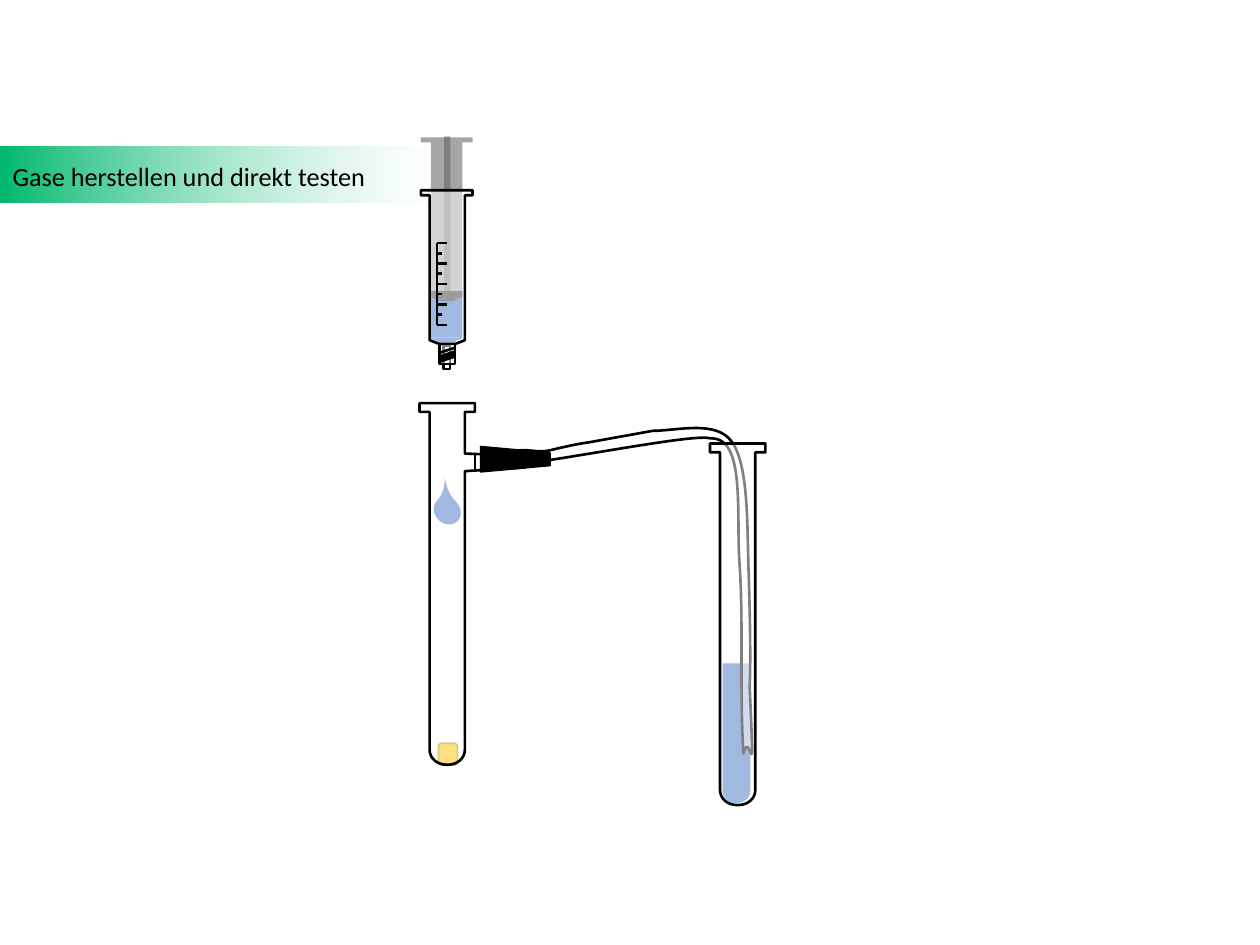
from lxml import etree
from pptx import Presentation
from pptx.dml.color import RGBColor
from pptx.enum.shapes import MSO_CONNECTOR, MSO_SHAPE
from pptx.enum.text import MSO_ANCHOR, MSO_AUTO_SIZE, PP_ALIGN
from pptx.oxml.ns import qn
from pptx.util import Cm, Pt

THEME = dict(font="Calibri", title_size=15, outline=1.5, thin=1,
             ink="000000", glass="FFFFFF", accent="00B86E", liquid="4472C4",
             solid="FFC000", solid_edge="BD8E00", plunger="A6A6A6",
             rod="808080", seal="3B3838")
TITLE = "Gase herstellen und direkt testen"

# All coordinates are in inches; a six-number step is a Bézier curve.
HOSE = [(5.95, 5.45), (5.96, 5.2, 5.95, 4.8, 5.94, 4.49),
        (5.93, 4.17, 5.94, 3.69, 5.81, 3.51), (5.69, 3.33, 5.37, 3.42, 5.18, 3.42),
        (4.68, 3.51), (4.54, 3.53, 4.43, 3.56, 4.34, 3.58),
        (4.24, 3.59, 4.16, 3.56, 4.12, 3.58), (4.11, 3.63, 4.11, 3.65, 4.1, 3.69),
        (4.63, 3.62, 5.53, 3.44, 5.64, 3.48), (5.92, 3.47, 5.84, 4.07, 5.87, 4.49),
        (5.9, 4.9, 5.87, 5.51, 5.9, 5.98), (5.96, 5.76, 5.99, 6.39, 5.95, 5.45)]
PLUNGER = [(3.75, 1.09), (3.75, 1.13), (3.67, 1.13), (3.67, 2.31),
           (3.42, 2.31), (3.42, 1.13), (3.34, 1.13), (3.34, 1.09)]
BARREL = [(3.75, 1.51), (3.75, 1.55), (3.69, 1.55), (3.69, 2.7), (3.64, 2.72),
          (3.61, 2.73), (3.49, 2.73), (3.46, 2.72), (3.41, 2.7), (3.41, 1.55),
          (3.34, 1.55), (3.34, 1.51)]
SIDE_ARM = [(0.14, 0.54), (0.62, 0.51), (0.62, 0.42), (0.14, 0.4)]
TUBES = [(5.855, 3.52, []), (3.55, 3.2, SIDE_ARM)]  # centre, top, side arm
ARM_RINGS = [3.77, 3.9, 4.03]
SCALE_X, SCALE_TOP, SCALE_STEP, SCALE_MARKS = 3.47, 1.93, 0.081, 9
THREAD_TOPS = [2.76, 2.79, 2.81, 2.83]


def inch(v):
    return Cm(2.54 * v)


def rgb(name):
    return RGBColor.from_string(THEME[name])


def set_alpha(color_parent, percent):
    color = color_parent.find(".//" + qn("a:srgbClr"))
    etree.SubElement(color, qn("a:alpha")).set("val", str(percent * 1000))


def paint(sp, fill=None, line=None, width=THEME["outline"]):
    sp.shadow.inherit = False
    if fill:
        sp.fill.solid()
        sp.fill.fore_color.rgb = rgb(fill)
        if fill == "glass":
            set_alpha(sp._element.spPr.find(qn("a:solidFill")), 50)
    else:
        sp.fill.background()
    if line:
        sp.line.color.rgb = rgb(line)
        sp.line.width = Pt(width)
    else:
        sp.line.fill.background()
    return sp


def shape(parent, kind, x, y, w, h, rotation=0, **style):
    sp = parent.shapes.add_shape(kind, inch(x), inch(y), inch(w), inch(h))
    sp.rotation = rotation
    return paint(sp, **style)


def outline(parent, steps, **style):
    """Draw a closed outline; each curve's three points become one Bézier."""
    points = [(inch(x), inch(y)) for step in steps
              for x, y in zip(step[::2], step[1::2])]
    builder = parent.shapes.build_freeform(*points[0])
    builder.add_line_segments(points[1:], close=True)
    sp = builder.convert_to_shape()
    segments = iter(list(sp._element.iter(qn("a:lnTo"))))
    for step in steps[1:]:
        segment = next(segments)
        if len(step) == 6:
            segment.tag = qn("a:cubicBezTo")
            for _ in range(2):
                control = next(segments)
                segment.append(control[0])
                control.getparent().remove(control)
    return paint(sp, **style)


def line(parent, x1, y1, x2, y2):
    cx = parent.shapes.add_connector(MSO_CONNECTOR.STRAIGHT, inch(x1), inch(y1),
                                     inch(x2), inch(y2))
    cx.line.color.rgb = rgb("ink")
    cx.line.width = Pt(THEME["outline"])
    etree.SubElement(cx._element.spPr, qn("a:effectLst"))


def tube_path(cx, top, arm):
    wall, rim, lip, bend, bottom = 0.14, 0.22, top + 0.07, top + 2.75, top + 2.87
    left, right = cx - wall, cx + wall
    return [(left, lip), (cx - rim, lip), (cx - rim, top), (cx + rim, top),
            (cx + rim, lip), (right, lip),
            *[(cx + x, top + y) for x, y in reversed(arm)], (right, bend),
            (right, bend + 0.07, cx + 0.08, bottom, cx, bottom),
            (cx - 0.08, bottom, left, bend + 0.07, left, bend)]


def stopper_path(top, shoulder):
    """Tapered end that closes a liquid column or the plunger."""
    return [(3.67, top), (3.67, shoulder), (3.63, shoulder + 0.01),
            (3.6, shoulder + 0.03), (3.48, shoulder + 0.03),
            (3.45, shoulder + 0.01), (3.42, shoulder), (3.42, top)]


def add_title(s):
    banner = shape(s, MSO_SHAPE.RECTANGLE, 0, 1.16, 3.44, 0.45)
    banner.fill.gradient()
    banner.fill.gradient_angle = 180
    for stop, name, pos in zip(banner.fill.gradient_stops, ("glass", "accent"), (0, 1)):
        stop.color.rgb = rgb(name)
        stop.position = pos
    set_alpha(banner._element.spPr.find(qn("a:gradFill")), 42)

    title = s.shapes.title
    title._element.addprevious(banner._element)
    title.left, title.top, title.width, title.height = map(inch, (0, 1.22, 3.03, 0.34))
    tf = title.text_frame
    tf.text = TITLE
    tf.word_wrap = False
    tf.auto_size = MSO_AUTO_SIZE.SHAPE_TO_FIT_TEXT
    tf.vertical_anchor = MSO_ANCHOR.TOP
    p = tf.paragraphs[0]
    p.alignment = PP_ALIGN.LEFT
    p.font.name, p.font.size = THEME["font"], Pt(THEME["title_size"])
    p.font.color.rgb = rgb("ink")


def add_test_tubes(s):
    drop = shape(s, MSO_SHAPE.TEAR, 3.45, 3.94, 0.2, 0.23, 314.8, fill="liquid")
    drop.adjustments[0] = 1.74
    shape(s, MSO_SHAPE.ROUNDED_RECTANGLE, 3.48, 5.9, 0.15, 0.17,
          fill="solid", line="solid_edge", width=THEME["thin"])
    liquid = s.shapes.add_group_shape()
    shape(liquid, MSO_SHAPE.OVAL, 5.75, 6.17, 0.19, 0.22, 268.7, fill="liquid")
    shape(liquid, MSO_SHAPE.RECTANGLE, 5.34, 5.66, 1.01, 0.22, 270, fill="liquid")
    glassware = s.shapes.add_group_shape()
    outline(glassware, HOSE, fill="glass", line="ink")
    for tube in TUBES:
        outline(glassware, tube_path(*tube), fill="glass", line="ink")
    for x in reversed(ARM_RINGS):
        line(glassware, x, 3.73, x, 3.61)
    shape(s, MSO_SHAPE.TRAPEZOID, 3.99, 3.37, 0.2, 0.55, 90,
          fill="ink", line="ink", width=THEME["thin"])


def add_syringe(s):
    g = s.shapes.add_group_shape()
    outline(g, stopper_path(2.68, 2.69), fill="liquid")
    shape(g, MSO_SHAPE.RECTANGLE, 3.36, 2.37, 0.37, 0.25, 90, fill="liquid")
    outline(g, PLUNGER, fill="plunger")
    shape(g, MSO_SHAPE.RECTANGLE, 2.93, 1.68, 1.24, 0.05, 90, fill="rod")
    outline(g, stopper_path(2.31, 2.36), fill="seal")
    outline(g, BARREL, fill="glass", line="ink")
    line(g, SCALE_X, SCALE_TOP, SCALE_X, SCALE_TOP + (SCALE_MARKS - 1) * SCALE_STEP)
    for first, length in ((0, 0.08), (1, 0.04)):
        for i in range(first, SCALE_MARKS, 2):
            y = SCALE_TOP + i * SCALE_STEP
            line(g, SCALE_X + length, y, SCALE_X, y)
    shape(g, MSO_SHAPE.RECTANGLE, 3.45, 2.81, 0.19, 0.05, 90, line="ink")
    shape(g, MSO_SHAPE.RECTANGLE, 3.47, 2.75, 0.16, 0.12, 90, fill="glass", line="ink")
    for y in THREAD_TOPS:
        line(g, 3.61, y, 3.49, y + 0.04)


def main():
    prs = Presentation()
    prs.slide_width, prs.slide_height = inch(10), inch(7.5)
    s = prs.slides.add_slide(prs.slide_layouts[5])
    add_title(s)
    add_test_tubes(s)
    add_syringe(s)
    prs.save("out.pptx")


if __name__ == "__main__":
    main()
